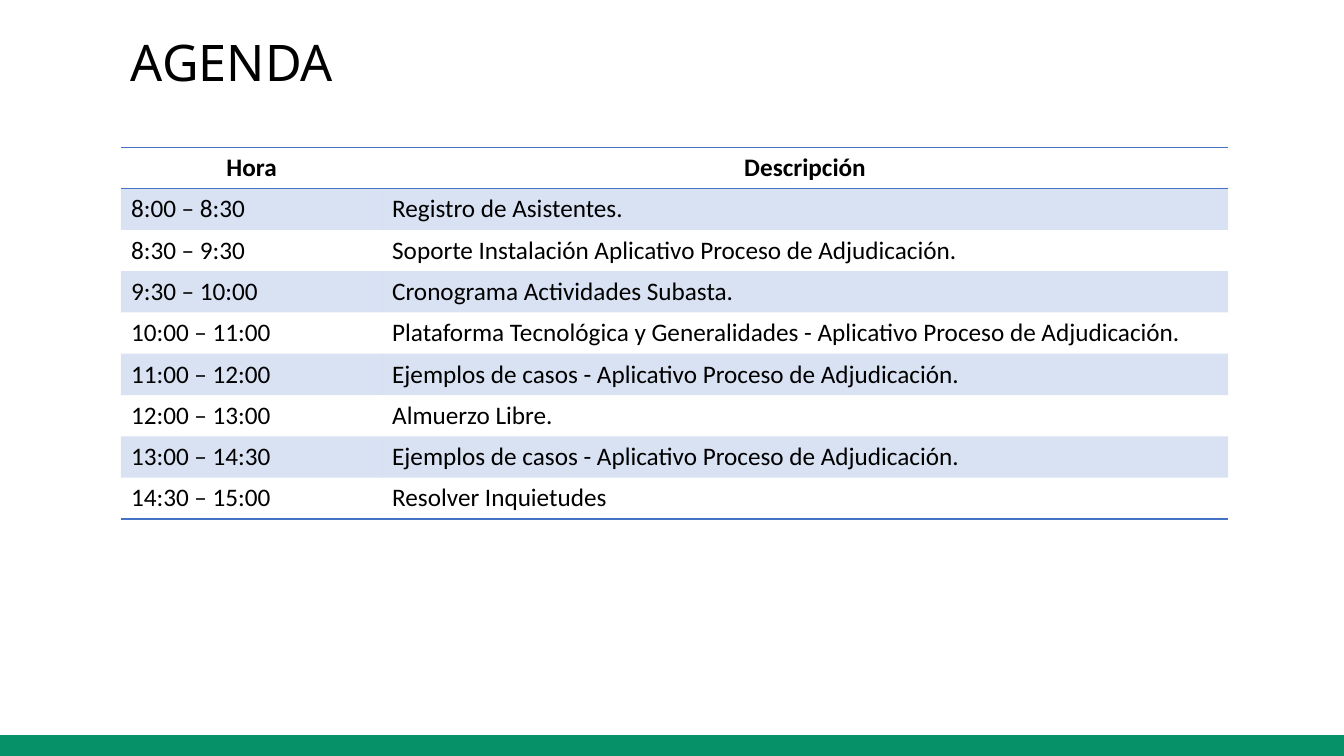
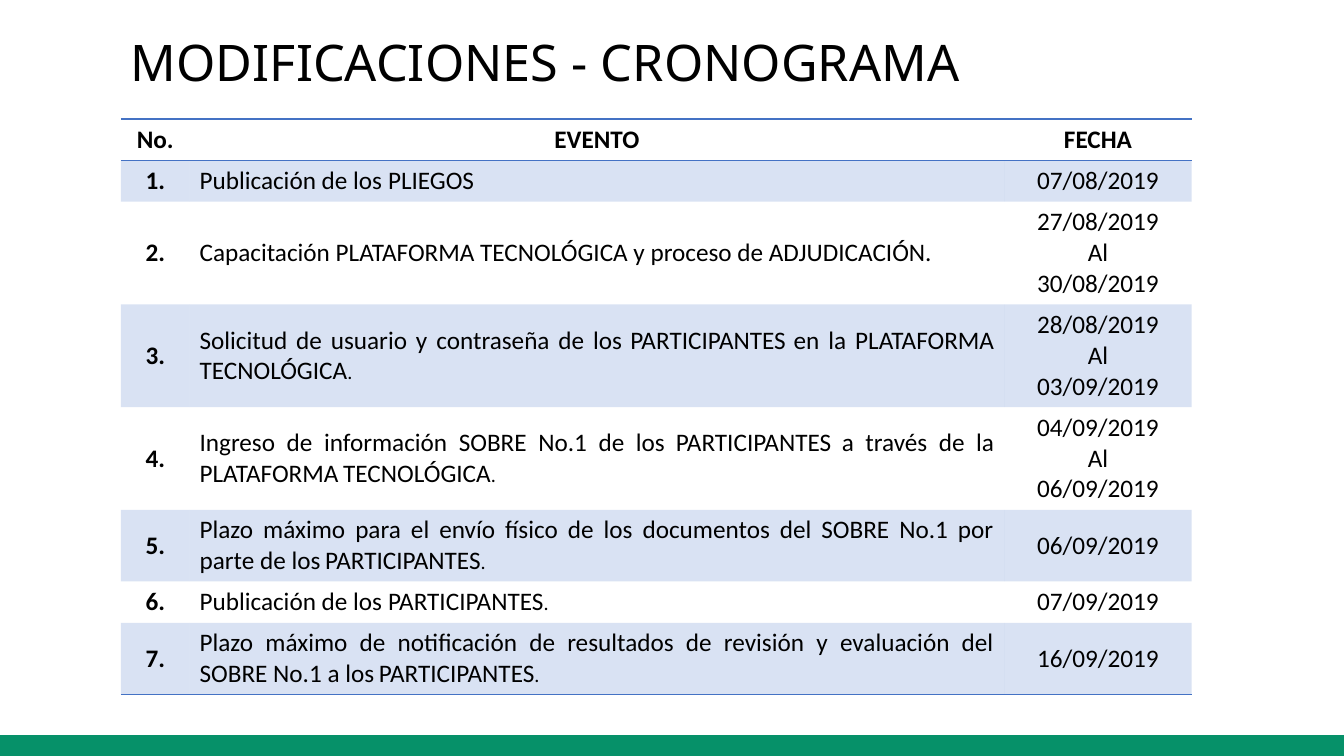
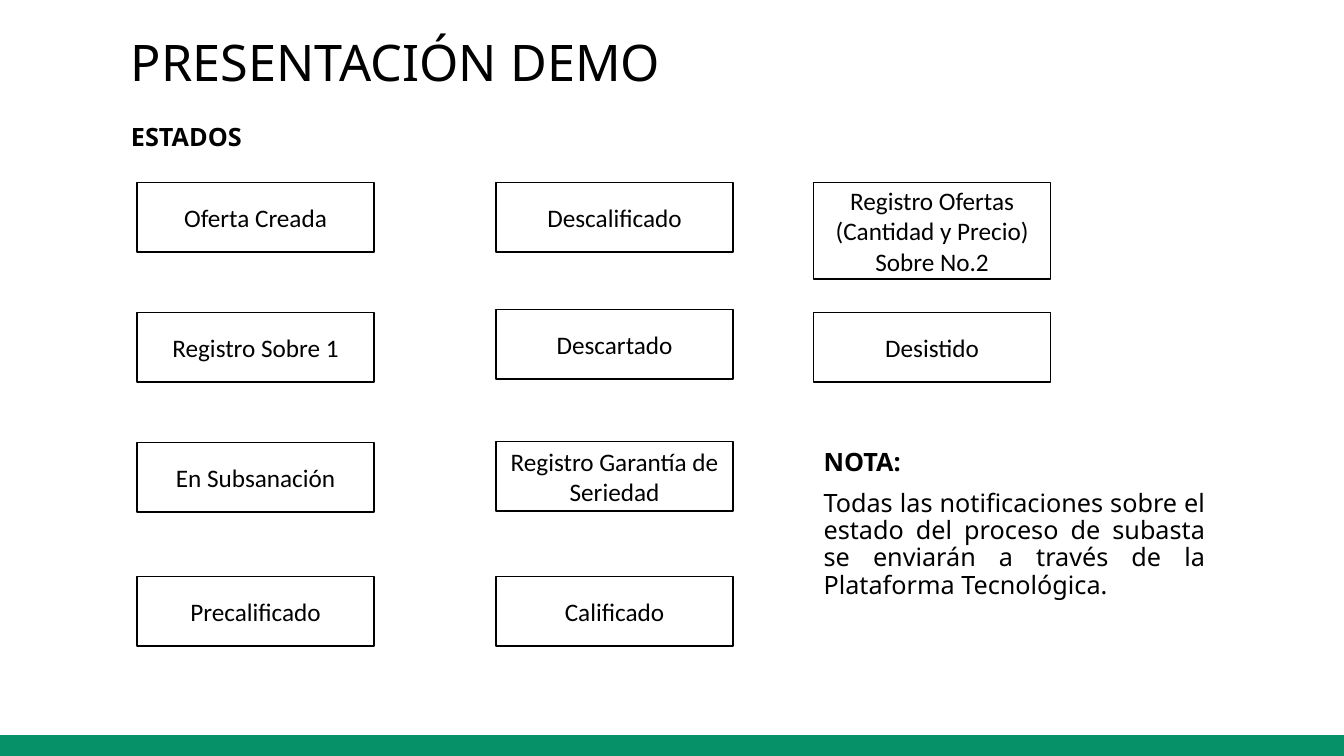
"""Build three slides on an auction: agenda, schedule and offer states."""
import pptx
import pptx.dml.color
import pptx.enum.shapes
import pptx.enum.text
import pptx.oxml
import pptx.oxml.ns
import pptx.util

Inches = pptx.util.Inches
Pt = pptx.util.Pt
ALIGN = pptx.enum.text.PP_ALIGN
MIDDLE = pptx.enum.text.MSO_ANCHOR.MIDDLE
COLORS = {"ink": "000000", "paper": "FFFFFF", "band": "069169", "blue": "4472C4"}
BODY = {"name": "Calibri", "size": Pt(18), "bold": False}
HEAD = {**BODY, "bold": True}
NOTE = {**BODY, "name": "Noto Sans"}
STRONG = {**NOTE, "bold": True}
TITLE = {**NOTE, "size": Pt(36)}
PLAIN = "{2D5ABB26-0587-4C30-8999-92F81FD0307C}"

AGENDA = [
    ("Hora", "Descripción"),
    ("8:00 – 8:30", "Registro de Asistentes."),
    ("8:30 – 9:30", "Soporte Instalación Aplicativo Proceso de Adjudicación."),
    ("9:30 – 10:00", "Cronograma Actividades Subasta."),
    ("10:00 – 11:00",
     "Plataforma Tecnológica y Generalidades - Aplicativo Proceso de Adjudicación."),
    ("11:00 – 12:00", "Ejemplos de casos - Aplicativo Proceso de Adjudicación."),
    ("12:00 – 13:00", "Almuerzo Libre."),
    ("13:00 – 14:30", "Ejemplos de casos - Aplicativo Proceso de Adjudicación."),
    ("14:30 – 15:00", "Resolver Inquietudes"),
]
EVENTS = [
    ("No.", "EVENTO", "FECHA"),
    ("1.", "Publicación de los |PLIEGOS", "07/08/2019"),
    ("2.", "Capacitación PLATAFORMA TECNOLÓGICA y proceso de ADJUDICACIÓN.",
     "27/08/2019\nAl\n30/08/2019"),
    ("3.", "Solicitud de usuario y contraseña de los| PARTICIPANTES |en la "
     "|PLATAFORMA TECNOLÓGICA.", "28/08/2019\nAl\n03/09/2019"),
    ("4.", "Ingreso de información SOBRE No.1 de los| PARTICIPANTES |a través de la"
     "| PLATAFORMA TECNOLÓGICA.", "04/09/2019\nAl\n06/09/2019"),
    ("5.", "Plazo máximo para el envío físico de los documentos del SOBRE No.1 "
     "por parte de los| PARTICIPANTES.", "06/09/2019"),
    ("6.", "Publicación de los |PARTICIPANTES.", "07/09/2019"),
    ("7.", "Plazo máximo de notificación de resultados de revisión y evaluación "
     "del SOBRE No.1 a los| PARTICIPANTES.", "16/09/2019"),
]
STATES = [
    (1.36, [(1.81, "Oferta Creada"), (3.1, "Registro Sobre 1"),
            (4.39, "En Subsanación"), (5.72, "Precalificado")]),
    (4.92, [(1.81, "Descalificado"), (3.07, "Descartado"),
            (4.38, "Registro Garantía de Seriedad"), (5.72, "Calificado")]),
    (8.07, [(1.81, "Registro Ofertas (Cantidad y Precio)\nSobre No.2"),
            (3.1, "Desistido")]),
]


class Deck:
    def __init__(self):
        self.prs = pptx.Presentation()
        self.prs.slide_width = Inches(13.33)
        self.prs.slide_height = Inches(7.5)
        self.slide = None

    def color(self, name):
        return pptx.dml.color.RGBColor.from_string(COLORS[name])

    def page(self, title):
        self.slide = self.prs.slides.add_slide(self.prs.slide_layouts[6])
        self.rect(0, 7.3, 13.33, 0.2, "band", "band")
        self.text(1.2, 0.33, 10.11, 0.7, [(title, TITLE)], ALIGN.LEFT)

    def rect(self, x, y, w, h, fill, line):
        shape = self.slide.shapes.add_shape(
            pptx.enum.shapes.MSO_SHAPE.RECTANGLE,
            Inches(x), Inches(y), Inches(w), Inches(h))
        shape.shadow.inherit = False
        shape.fill.solid()
        shape.fill.fore_color.rgb = self.color(fill)
        shape.line.color.rgb = self.color(line)
        shape.line.width = Pt(1)
        return shape

    def runs(self, para, text, style, align):
        para.alignment = align
        for i, part in enumerate(text.split("|")):
            run = para.add_run()
            run.text = part
            for key, value in style.items():
                setattr(run.font, key, value)
            run.font.color.rgb = self.color("ink")
            if i % 2:
                run._r.get_or_add_rPr().set("cap", "small")

    def fill(self, frame, items, align):
        for i, (text, style) in enumerate(items):
            para = frame.add_paragraph() if i else frame.paragraphs[0]
            self.runs(para, text, style, align)

    def text(self, x, y, w, h, items, align):
        box = self.slide.shapes.add_textbox(Inches(x), Inches(y), Inches(w), Inches(h))
        frame = box.text_frame
        frame.word_wrap = True
        self.fill(frame, items, align)
        for i, para in enumerate(frame.paragraphs):
            para.line_spacing = 0.9
            para.space_before = Pt(10 if i else 0)

    def state(self, x, y, text):
        lines = text.split("\n")
        shape = self.rect(x, y, 2.35, 0.96 if len(lines) > 1 else 0.69, "paper", "ink")
        shape.text_frame.word_wrap = True
        shape.text_frame.vertical_anchor = MIDDLE
        self.fill(shape.text_frame, [(line, BODY) for line in lines], ALIGN.CENTER)

    def tint(self, cell):
        cell.fill.solid()
        cell.fill.fore_color.rgb = self.color("blue")
        tone = cell._tc.tcPr.find(".//" + pptx.oxml.ns.qn("a:srgbClr"))
        tone.append(pptx.oxml.parse_xml(
            f'<a:alpha {pptx.oxml.ns.nsdecls("a")} val="20000"/>'))

    def rule(self, cell, side):
        cell._tc.get_or_add_tcPr().insert(0, pptx.oxml.parse_xml(
            f'<a:{side} {pptx.oxml.ns.nsdecls("a")} w="12700"><a:solidFill>'
            f'<a:srgbClr val="{COLORS["blue"]}"/></a:solidFill></a:{side}>'))

    def table(self, y, rows, widths, highs, aligns, lead):
        grid = self.slide.shapes.add_table(
            len(rows), len(widths), Inches(1.2), Inches(y),
            Inches(sum(widths)), Inches(sum(highs))).table
        grid.first_row = grid.horz_banding = False
        grid._tbl.tblPr.find(pptx.oxml.ns.qn("a:tableStyleId")).text = PLAIN
        for col, width in zip(grid.columns, widths):
            col.width = Inches(width)
        for r, (row, high) in enumerate(zip(rows, highs)):
            grid.rows[r].height = Inches(high)
            for c, text in enumerate(row):
                cell = grid.cell(r, c)
                cell.vertical_anchor = MIDDLE
                style = HEAD if r == 0 or c in lead else BODY
                align = aligns[c] if r else ALIGN.CENTER
                self.fill(cell.text_frame,
                          [(line, style) for line in text.split("\n")], align)
                if r % 2:
                    self.tint(cell)
                else:
                    cell.fill.background()
                if r in (0, len(rows) - 1):
                    self.rule(cell, "lnB")
                if r == 0:
                    self.rule(cell, "lnT")


def main():
    deck = Deck()
    deck.page("AGENDA")
    deck.table(1.46, AGENDA, [2.59, 8.39], [0.41] * len(AGENDA),
               [ALIGN.JUSTIFY, ALIGN.LEFT], [])

    deck.page("MODIFICACIONES - CRONOGRAMA")
    deck.table(1.18, EVENTS, [0.68, 8.08, 1.86],
               [0.41, 0.41, 1.02, 1.02, 1.02, 0.71, 0.41, 0.71],
               [ALIGN.CENTER, ALIGN.JUSTIFY, ALIGN.CENTER], [0])

    deck.page("PRESENTACIÓN DEMO")
    deck.text(1.2, 1.19, 10.69, 0.5, [("ESTADOS", STRONG)], ALIGN.JUSTIFY)
    for x, column in STATES:
        for y, text in column:
            deck.state(x, y, text)
    deck.text(8.07, 4.41, 3.98, 2.09, [
        ("NOTA:", STRONG),
        ("Todas las notificaciones sobre el estado del proceso de subasta "
         "se enviarán a través de la Plataforma Tecnológica.", NOTE),
    ], ALIGN.JUSTIFY)
    deck.prs.save("out.pptx")


if __name__ == "__main__":
    main()
